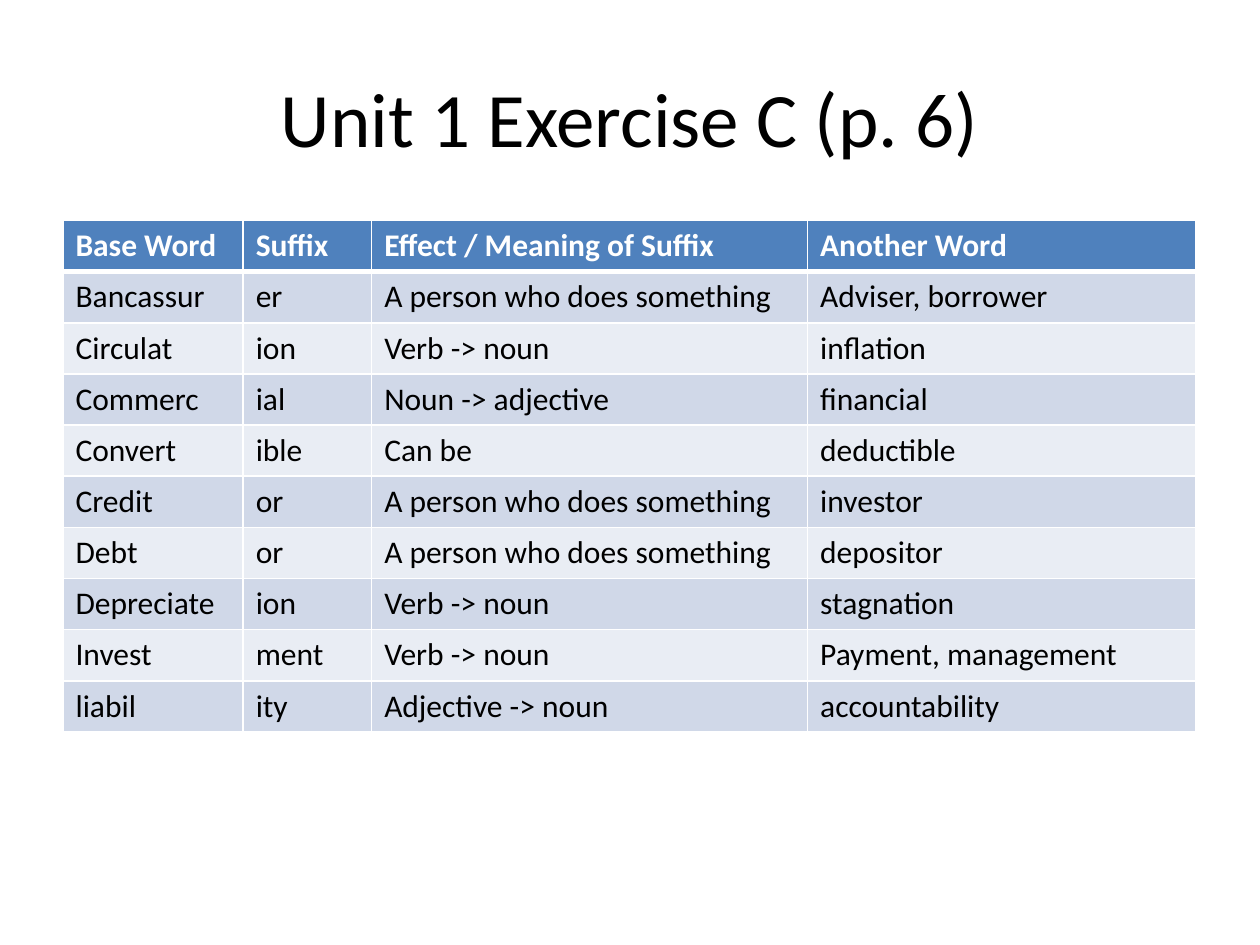
"""Build the Unit 1 Exercise C slide with its table of suffixes."""
from lxml import etree
from pptx import Presentation
from pptx.dml.color import RGBColor
from pptx.enum.text import MSO_ANCHOR, PP_ALIGN
from pptx.oxml.ns import qn
from pptx.util import Inches, Pt

MIDDLE = MSO_ANCHOR.MIDDLE
CENTER = PP_ALIGN.CENTER
WHITE = RGBColor(0xFF, 0xFF, 0xFF)
BLACK = RGBColor(0x00, 0x00, 0x00)
HEADER_BLUE = RGBColor(0x4F, 0x81, 0xBD)
BAND_FILLS = (RGBColor(0xD0, 0xD8, 0xE8), RGBColor(0xE9, 0xED, 0xF4))
FONT = "Calibri"

TITLE = "Unit 1 Exercise C (p. 6)"
ROWS = [
    ("Base Word", "Suffix", "Effect / Meaning of Suffix", "Another Word"),
    ("Bancassur", "er", "A person who does something", "Adviser, borrower"),
    ("Circulat", "ion", "Verb -> noun", "inflation"),
    ("Commerc", "ial", "Noun -> adjective", "financial"),
    ("Convert", "ible", "Can be", "deductible"),
    ("Credit", "or", "A person who does something", "investor"),
    ("Debt", "or", "A person who does something", "depositor"),
    ("Depreciate", "ion", "Verb -> noun", "stagnation"),
    ("Invest", "ment", "Verb -> noun", "Payment, management"),
    ("liabil", "ity", "Adjective -> noun", "accountability"),
]
COLUMN_WIDTHS = (1.43, 1.02, 3.46, 3.08)
ROW_HEIGHT = 0.406
LEFT, TABLE_TOP, WIDTH = 0.5, 1.75, 9


def format_font(paragraph, size, color, bold=False):
    for run in paragraph.runs:
        run.font.name = FONT
        run.font.size = Pt(size)
        run.font.bold = bold
        run.font.color.rgb = color


def add_border(cell, side, points):
    properties = cell._tc.get_or_add_tcPr()
    line = etree.SubElement(properties, qn(f"a:ln{side}"), w=str(Pt(points)))
    fill = etree.SubElement(line, qn("a:solidFill"))
    etree.SubElement(fill, qn("a:srgbClr"), val=str(WHITE))


def add_title(slide):
    title = slide.shapes.title
    title.left, title.top = Inches(LEFT), Inches(0.3)
    title.width, title.height = Inches(WIDTH), Inches(1.25)
    title.text_frame.text = TITLE
    title.text_frame.vertical_anchor = MIDDLE
    paragraph = title.text_frame.paragraphs[0]
    paragraph.alignment = CENTER
    format_font(paragraph, 44, BLACK)


def add_suffix_table(slide):
    table = slide.shapes.add_table(
        len(ROWS), len(COLUMN_WIDTHS), Inches(LEFT), Inches(TABLE_TOP),
        Inches(WIDTH), Inches(ROW_HEIGHT * len(ROWS))).table
    for column, width in zip(table.columns, COLUMN_WIDTHS):
        column.width = Inches(width)
    for index, words in enumerate(ROWS):
        is_header = index == 0
        table.rows[index].height = Inches(ROW_HEIGHT)
        borders = {"L": 1, "R": 1, "T": 3 if index == 1 else 1,
                   "B": 3 if is_header else 1}
        for cell, word in zip(table.rows[index].cells, words):
            cell.text_frame.text = word
            format_font(cell.text_frame.paragraphs[0], 18,
                        WHITE if is_header else BLACK, is_header)
            for side, points in borders.items():
                add_border(cell, side, points)
            cell.fill.solid()
            cell.fill.fore_color.rgb = (
                HEADER_BLUE if is_header else BAND_FILLS[(index - 1) % 2])


def main():
    presentation = Presentation()
    presentation.slide_width = Inches(10)
    presentation.slide_height = Inches(7.5)
    slide = presentation.slides.add_slide(
        presentation.slide_layouts.get_by_name("Title Only"))
    add_title(slide)
    add_suffix_table(slide)
    presentation.save("out.pptx")


if __name__ == "__main__":
    main()
